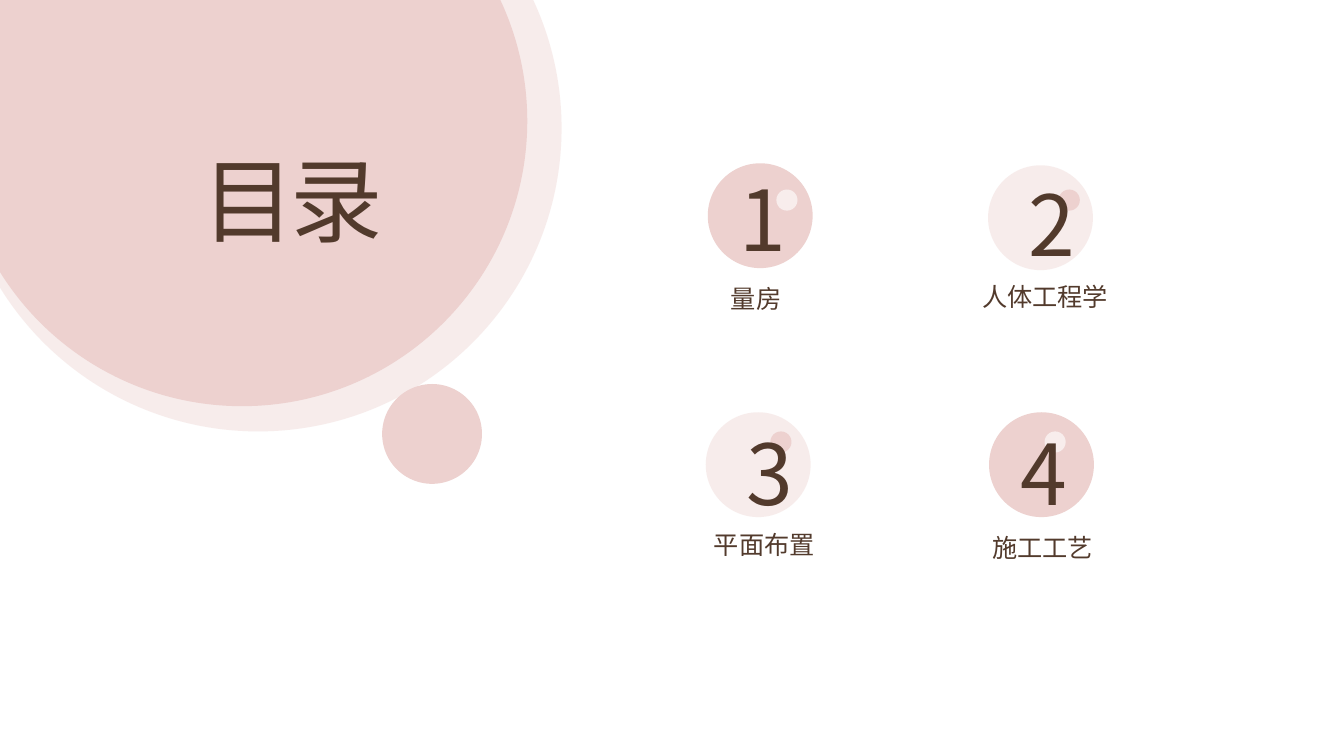
from math import acos, asin, cos, pi, sin, tan

from pptx import Presentation
from pptx.dml.color import RGBColor
from pptx.enum.shapes import MSO_SHAPE
from pptx.enum.text import MSO_ANCHOR, MSO_AUTO_SIZE as AUTO, PP_ALIGN
from pptx.oxml.ns import qn
from pptx.util import Inches, Pt

FONT = "Noto Sans CJK SC"
BROWN, PINK, PALE, DOT = "523A2C", "EDD1CF", "F6E8E7", "F8EDEC"
CIRCLE, DOT_SIZE = 1.04, 0.21

# number, label, circle position, strong colour, dot position, number position, label box
TOPICS = [
    ("1", "量房", (7.02, 1.62), True, (7.7, 1.88), (7.24, 1.64), (7.15, 2.76, 0.7)),
    ("2", "人体工程学", (9.8, 1.64), False, (10.5, 1.88), (10.1, 1.69), (9.64, 2.74, 1.45)),
    ("3", "平面布置", (7, 4.09), False, (7.64, 4.28), (7.31, 4.16), (6.98, 5.2, 1.2)),
    ("4", "施工工艺", (9.81, 4.09), True, (10.36, 4.28), (10.02, 4.16), (9.74, 5.23, 1.2)),
]


def rgb(color):
    return RGBColor.from_string(color)


def paint(sp, color, alpha=None):
    sp.shadow.inherit = False
    sp.fill.solid()
    sp.fill.fore_color.rgb = rgb(color)
    sp.line.fill.background()
    if alpha:
        clr = sp.element.spPr.find(qn("a:solidFill"))[0]
        clr.append(clr.makeelement(qn("a:alpha"), {"val": str(alpha * 1000)}))


def add_circle(s, x, y, size, color, alpha=None):
    sp = s.shapes.add_shape(MSO_SHAPE.OVAL, Inches(x), Inches(y), Inches(size), Inches(size))
    paint(sp, color, alpha)


def arc_points(cx, cy, radius, start, end):
    """Return the two control points and the end point of a circular Bezier arc."""
    k = 4 / 3 * tan((end - start) / 4)
    unit = [(cos(start) - k * sin(start), sin(start) + k * cos(start)),
            (cos(end) + k * sin(end), sin(end) - k * cos(end)),
            (cos(end), sin(end))]
    return [(Inches(cx + radius * x), Inches(cy + radius * y)) for x, y in unit]


def bend(sp, arcs):
    """Turn the first line segments, three for each arc, into Bezier curves."""
    outline = next(sp.element.iter(qn("a:path")))
    lines = outline.findall(qn("a:lnTo"))
    for i in range(0, 3 * arcs, 3):
        curve = outline.makeelement(qn("a:cubicBezTo"), {})
        lines[i].addprevious(curve)
        for line in lines[i:i + 3]:
            curve.append(line[0])
            outline.remove(line)


def add_corner_circle(s, cx, cy, radius, color, alpha=None):
    """Draw a circle cut off at the slide's left and top edges."""
    angles = [-asin(cy / radius), 0, pi / 2, acos(-cx / radius)]
    points = [p for start, end in zip(angles, angles[1:])
              for p in arc_points(cx, cy, radius, start, end)]
    builder = s.shapes.build_freeform(Inches(cx + radius * cos(angles[0])), 0)
    builder.add_line_segments(points + [(0, 0)], close=True)
    sp = builder.convert_to_shape()
    bend(sp, len(angles) - 1)
    paint(sp, color, alpha)


def write(sp, text, size, wrap=True, anchor=MSO_ANCHOR.MIDDLE, auto=AUTO.NONE, spacing=None):
    tf = sp.text_frame
    tf.word_wrap, tf.vertical_anchor, tf.auto_size = wrap, anchor, auto
    p = tf.paragraphs[0]
    p.alignment = PP_ALIGN.CENTER
    r = p.add_run()
    r.text = text
    r.font.size, r.font.name = Pt(size), FONT
    r.font.color.rgb = rgb(BROWN)
    rPr = r.font._element
    rPr.append(rPr.makeelement(qn("a:ea"), {"typeface": FONT}))
    if spacing:
        rPr.set("spc", str(spacing * 100))


def add_text(s, x, y, w, h, text, size, **fmt):
    box = s.shapes.add_textbox(Inches(x), Inches(y), Inches(w), Inches(h))
    write(box, text, size, **fmt)


def add_topic(s, number, label, circle, strong, dot, number_at, label_at):
    if strong:
        add_circle(s, *circle, CIRCLE, PINK)
    else:
        add_circle(s, *circle, CIRCLE, PALE, alpha=80)
    add_circle(s, *dot, DOT_SIZE, DOT if strong else PINK)
    add_text(s, *number_at, 0.47, 1.05, number, 60)
    add_text(s, *label_at, 0.4, label, 18, wrap=False, anchor=MSO_ANCHOR.TOP,
             auto=AUTO.SHAPE_TO_FIT_TEXT)


def add_title(s, text):
    title = s.shapes.title
    title.left, title.top = Inches(-0.07), Inches(1.5)
    title.width, title.height = Inches(5.94), Inches(0.93)
    write(title, text, 66, spacing=-3)
    title.element.getparent().append(title.element)  # in front of the circles


def main():
    prs = Presentation()
    prs.slide_width, prs.slide_height = Inches(13.33), Inches(7.5)
    s = prs.slides.add_slide(prs.slide_layouts[5])
    add_corner_circle(s, 2.56, 1.27, 3.01, PALE, alpha=80)
    add_circle(s, 3.79, 3.81, 0.99, PINK)
    add_corner_circle(s, 2.4, 1.2, 2.83, PINK)
    for topic in TOPICS:
        add_topic(s, *topic)
    add_title(s, "目录")
    prs.save("out.pptx")


if __name__ == "__main__":
    main()
